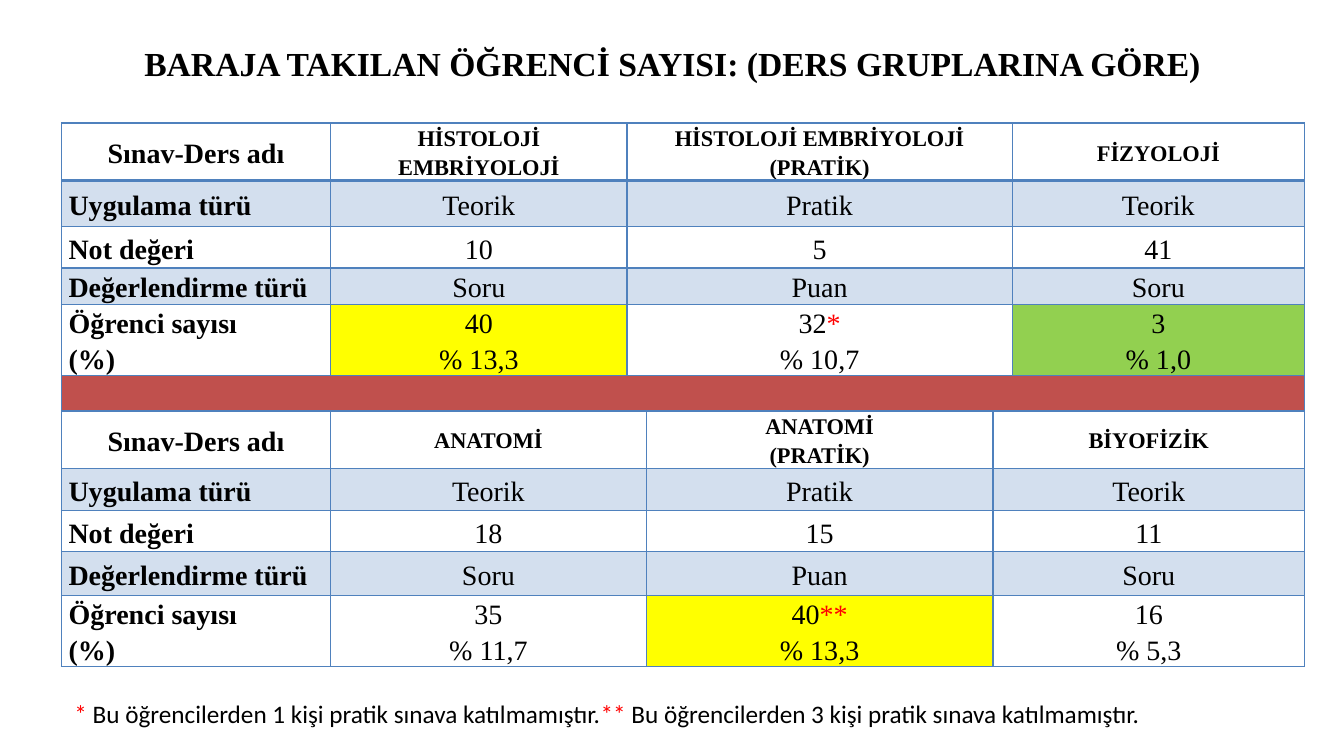
from lxml import etree
from pptx import Presentation
from pptx import util as u
from pptx.dml.color import RGBColor
from pptx.enum import text
from pptx.oxml.ns import qn

SERIF = "Times New Roman"
BLACK, RED, RULE = "000000", "FF0000", "4F81BD"
BAND, BRICK, YELLOW, GREEN = "D3DFEE", "C0504D", "FFFF00", "92D050"
COLUMN_WIDTHS = [2.67, 2.94, 0.19, 3.44, 0.19, 2.9]
ROW_HEIGHTS = [0.56, 0.46, 0.41, 0.36, 0.56, 0.35, 0.56, 0.42, 0.41, 0.43, 0.56]
LABELS = ["Sınav-Ders adı", "Uygulama türü", "Not değeri",
          "Değerlendirme türü", "Öğrenci sayısı\n(%)"]
SEPARATOR_ROW = 5

UPPER = {
    "first_row": 0,
    "spans": [(0, 0), (1, 1), (2, 4), (5, 5)],
    "values": [
        ["HİSTOLOJİ EMBRİYOLOJİ", "HİSTOLOJİ EMBRİYOLOJİ\n(PRATİK)", "FİZYOLOJİ"],
        ["Teorik", "Pratik", "Teorik"],
        ["10", "5", "41"],
        ["Soru", "Puan", "Soru"],
        ["40\n% 13,3", "32*\n% 10,7", "3\n% 1,0"],
    ],
    "count_fills": [None, YELLOW, None, GREEN],
}
LOWER = {
    "first_row": 6,
    "spans": [(0, 0), (1, 2), (3, 3), (4, 5)],
    "values": [
        ["ANATOMİ", "ANATOMİ\n(PRATİK)", "BİYOFİZİK"],
        ["Teorik", "Pratik", "Teorik"],
        ["18", "15", "11"],
        ["Soru", "Puan", "Soru"],
        ["35\n% 11,7", "40**\n% 13,3", "16\n% 5,3"],
    ],
    "count_fills": [None, "FFFFFF", YELLOW, "FFFFFF"],
}


def color(hex_code):
    return RGBColor.from_string(hex_code)


def format_run(run, size, font=SERIF, hex_code=BLACK, bold=False):
    run.font.size = u.Pt(size)
    run.font.name = font
    run.font.bold = bold
    run.font.color.rgb = color(hex_code)


def add_run(paragraph, wording, size, **style):
    run = paragraph.add_run()
    run.text = wording
    format_run(run, size, **style)


def add_title(slide):
    title = slide.shapes.title
    title.left, title.top = u.Inches(0.92), u.Inches(0.4)
    title.width, title.height = u.Inches(11.5), u.Inches(0.51)
    frame = title.text_frame
    frame.text = "BARAJA TAKILAN ÖĞRENCİ SAYISI: (DERS GRUPLARINA GÖRE)"
    frame.vertical_anchor = text.MSO_ANCHOR.MIDDLE
    heading = frame.paragraphs[0]
    heading.alignment = text.PP_ALIGN.CENTER
    heading.line_spacing = 0.9
    format_run(heading.runs[0], 24, bold=True)


def rule_cell(cell, top, bottom):
    properties = cell._tc.get_or_add_tcPr()
    for side, width in (("L", 1), ("R", 1), ("T", top), ("B", bottom)):
        line = etree.SubElement(properties, qn(f"a:ln{side}"), w=str(u.Pt(width)))
        fill = etree.SubElement(line, qn("a:solidFill"))
        etree.SubElement(fill, qn("a:srgbClr"), val=RULE)


def paint_cell(cell, hex_code):
    if hex_code:
        cell.fill.solid()
        cell.fill.fore_color.rgb = color(hex_code)
    else:
        cell.fill.background()


def fill_cell(cell, wording, size, bold, centered):
    cell.vertical_anchor = text.MSO_ANCHOR.MIDDLE
    cell.margin_left = cell.margin_right = u.Inches(0.07)
    cell.margin_top = cell.margin_bottom = 0
    cell.text_frame.text = wording
    for paragraph in cell.text_frame.paragraphs:
        paragraph.alignment = text.PP_ALIGN.CENTER if centered else text.PP_ALIGN.LEFT
        paragraph.line_spacing = 1.15
        number, star, rest = paragraph.text.partition("*")
        paragraph.text = number
        format_run(paragraph.runs[0], size, bold=bold)
        if star:
            add_run(paragraph, star + rest, size, hex_code=RED, bold=bold)


def fill_block(table, block):
    for offset, (label, values) in enumerate(zip(LABELS, block["values"])):
        row = block["first_row"] + offset
        is_header = offset == 0
        fills = block["count_fills"] if offset == 4 else [BAND if offset % 2 else None] * 4
        for part, ((first, last), wording) in enumerate(zip(block["spans"], [label] + values)):
            is_label = part == 0
            for column in range(first, last + 1):
                paint_cell(table.cell(row, column), fills[part])
            cell = table.cell(row, first)
            if last > first:
                cell.merge(table.cell(row, last))
            fill_cell(cell, wording, 16 if is_header and not is_label else 20,
                      is_header or is_label, is_header or not is_label)


def add_separator(table):
    row = table.rows[SEPARATOR_ROW]
    for cell in row.cells:
        paint_cell(cell, BRICK)
        cell.margin_top = cell.margin_bottom = 0
    row.cells[0].merge(row.cells[len(COLUMN_WIDTHS) - 1])


def add_exam_table(slide):
    holder = slide.shapes.add_table(len(ROW_HEIGHTS), len(COLUMN_WIDTHS), u.Inches(0.61),
                                    u.Inches(1.22), u.Inches(12.33), u.Inches(5.52))
    table = holder.table
    table.first_row = table.horz_banding = False
    for column, width in zip(table.columns, COLUMN_WIDTHS):
        column.width = u.Inches(width)
    for index, (row, height) in enumerate(zip(table.rows, ROW_HEIGHTS)):
        row.height = u.Inches(height)
        for cell in row.cells:
            rule_cell(cell, 2.25 if index == 1 else 1, 2.25 if index == 0 else 1)
    holder.height = u.Inches(5.52)
    for block in (UPPER, LOWER):
        fill_block(table, block)
    add_separator(table)


def add_footnote(slide):
    box = slide.shapes.add_textbox(u.Inches(0.14), u.Inches(6.83), u.Inches(12.8), u.Inches(0.45))
    frame = box.text_frame
    frame.word_wrap = True
    frame.auto_size = text.MSO_AUTO_SIZE.SHAPE_TO_FIT_TEXT
    note = frame.paragraphs[0]
    note.alignment = text.PP_ALIGN.JUSTIFY
    note.line_spacing = 1.15
    note.space_after = u.Pt(10)
    note._p.get_or_add_pPr().set("marL", str(u.Inches(0.5)))
    for wording, hex_code in (
        ("* ", RED),
        ("Bu öğrencilerden 1 kişi pratik sınava katılmamıştır.", BLACK),
        ("**", RED),
        (" Bu öğrencilerden 3 kişi pratik sınava katılmamıştır.", BLACK),
    ):
        add_run(note, wording, 18, font="Calibri", hex_code=hex_code)


def main():
    deck = Presentation()
    deck.slide_width, deck.slide_height = u.Inches(13.33), u.Inches(7.5)
    slide = deck.slides.add_slide(deck.slide_layouts[5])
    add_title(slide)
    add_exam_table(slide)
    add_footnote(slide)
    deck.save("out.pptx")


if __name__ == "__main__":
    main()
